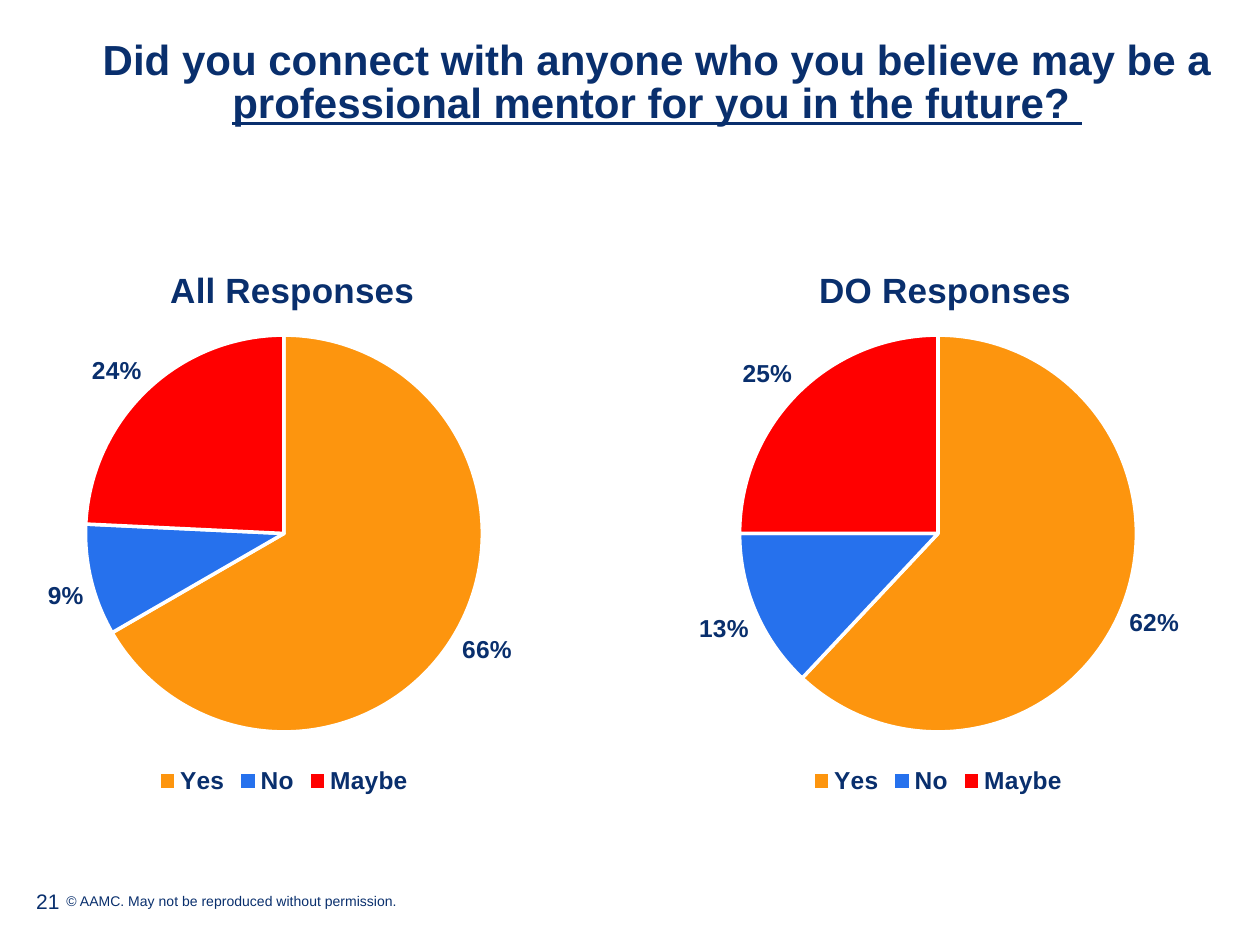
import pptx
import pptx.chart.data
import pptx.dml.color
import pptx.enum.chart
import pptx.enum.text
import pptx.util
from lxml import etree
from pptx.util import Cm, Pt

RGB = pptx.dml.color.RGBColor
NAVY = RGB(0x09, 0x2F, 0x6D)
ORANGE = RGB(0xFD, 0x95, 0x0E)
BLUE = RGB(0x26, 0x71, 0xED)
RED = RGB(0xFF, 0x00, 0x00)
WHITE = RGB(0xFF, 0xFF, 0xFF)
FACE = "Arial"

# Content: title runs are (text, underlined)
TITLE = [
    ("Did you connect with anyone who you believe may be a ", False),
    ("professional mentor for you in the future? ", True),
]
# Text, left, top, width, height in cm, then size in points
NOTES = [
    ("© AAMC. May not be reproduced without permission.",
     1.09, 17.88, 20.88, 0.58, 8),
    ("21", 0.48, 17.65, 5.72, 1.02, 12),
]
ANSWERS = [("Yes", ORANGE), ("No", BLUE), ("Maybe", RED)]
# Layouts are fractions of the chart: x, y and, for the pie, width, height
PIES = [
    {"name": "All Responses", "vals": (66, 9, 24), "left": -2.34,
     "width": 16.13, "head": (0.35, 0.05), "plot": (0.25, 0.18, 0.5, 0.7)},
    {"name": "DO Responses", "vals": (62, 13, 25), "left": 10.49,
     "width": 16.84, "head": (0.35, 0.05), "plot": (0.26, 0.18, 0.48, 0.7)},
]
TOP, HEIGHT = 4.7, 11.43


def style(font, size, bold=False):
    font.name, font.size, font.bold = FACE, Pt(size), bold
    font.color.rgb = NAVY


def place(node, spots, inner=False):
    """Give a chart part a manual layout."""
    ns = node.nsmap["c"]
    for old in node.findall(f"{{{ns}}}layout"):
        node.remove(old)
    layout = etree.Element(f"{{{ns}}}layout")
    manual = etree.SubElement(layout, f"{{{ns}}}manualLayout")
    pairs = [("layoutTarget", "inner")] if inner else []
    pairs += [("xMode", "edge"), ("yMode", "edge")]
    pairs += zip("xywh", spots)
    for tag, val in pairs:
        etree.SubElement(manual, f"{{{ns}}}{tag}").set("val", str(val))
    text = node.find(f"{{{ns}}}tx")
    node.insert(0 if text is None else 1, layout)


def add_pie(slide, pie):
    data = pptx.chart.data.CategoryChartData()
    data.categories = [name for name, _ in ANSWERS]
    data.add_series(pie["name"], pie["vals"])
    chart = slide.shapes.add_chart(
        pptx.enum.chart.XL_CHART_TYPE.PIE, Cm(pie["left"]), Cm(TOP),
        Cm(pie["width"]), Cm(HEIGHT), data).chart
    style(chart.font, 10)

    # Heading and legend
    chart.has_title = True
    frame = chart.chart_title.text_frame
    frame.text = pie["name"]
    style(frame.paragraphs[0].font, 20, True)
    chart.chart_title.include_in_layout = False
    chart.has_legend = True
    chart.legend.position = pptx.enum.chart.XL_LEGEND_POSITION.BOTTOM
    chart.legend.include_in_layout = False
    style(chart.legend.font, 14, True)

    # Slices and labels
    plot = chart.plots[0]
    plot.vary_by_categories = True
    for i, (_, color) in enumerate(ANSWERS):
        form = plot.series[0].points[i].format
        form.fill.solid()
        form.fill.fore_color.rgb = color
        form.line.color.rgb = WHITE
        form.line.width = Pt(2)
    labels = plot.series[0].data_labels
    labels.show_value = True
    labels.number_format = '0"%"'
    labels.number_format_is_linked = False
    labels.position = pptx.enum.chart.XL_LABEL_POSITION.OUTSIDE_END
    style(labels.font, 14, True)

    place(chart.chart_title._element, pie["head"])
    place(plot._element.getparent(), pie["plot"], inner=True)


def add_title(slide):
    title = slide.shapes.title
    title.left, title.top = Cm(1.6), Cm(0.84)
    title.width, title.height = Cm(23.29), Cm(1.73)
    frame = title.text_frame
    frame.word_wrap = True
    frame.auto_size = pptx.enum.text.MSO_AUTO_SIZE.NONE
    frame.vertical_anchor = pptx.enum.text.MSO_ANCHOR.BOTTOM
    frame.margin_left = frame.margin_right = 0
    frame.margin_top = frame.margin_bottom = 0
    para = frame.paragraphs[0]
    para.alignment = pptx.enum.text.PP_ALIGN.CENTER
    para.line_spacing = 0.85
    style(para.font, 24, True)
    for text, line in TITLE:
        run = para.add_run()
        run.text = text
        if line:
            run.font.underline = True


def add_note(slide, text, left, top, width, height, size):
    box = slide.shapes.add_textbox(Cm(left), Cm(top), Cm(width), Cm(height))
    frame = box.text_frame
    frame.word_wrap = True
    frame.vertical_anchor = pptx.enum.text.MSO_ANCHOR.MIDDLE
    frame.text = text
    style(frame.paragraphs[0].font, size)


def main():
    deck = pptx.Presentation()
    deck.slide_width, deck.slide_height = Cm(25.4), Cm(19.05)
    slide = deck.slides.add_slide(deck.slide_layouts[5])
    add_title(slide)
    for note in NOTES:
        add_note(slide, *note)
    for pie in PIES:
        add_pie(slide, pie)
    deck.save("out.pptx")


if __name__ == "__main__":
    main()
